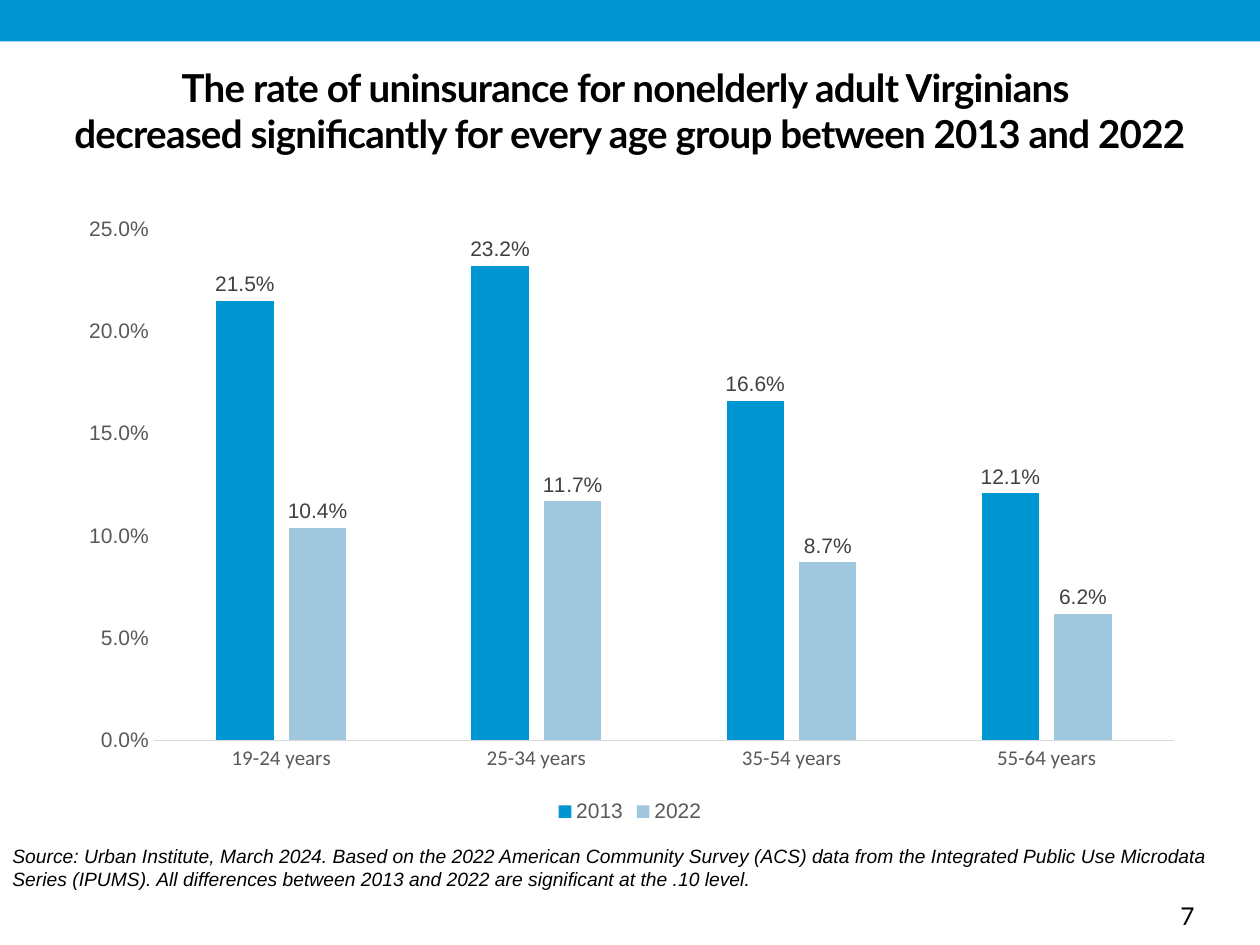
from lxml import etree
from pptx import Presentation
from pptx.chart.data import CategoryChartData
from pptx.dml.color import RGBColor
from pptx.enum.chart import XL_CHART_TYPE as ChartType, XL_LABEL_POSITION as LabelPosition
from pptx.enum.chart import XL_LEGEND_POSITION as LegendPosition, XL_TICK_MARK as TickMark
from pptx.enum.shapes import MSO_SHAPE as Shape
from pptx.enum.text import MSO_ANCHOR as Anchor, MSO_AUTO_SIZE as AutoSize, PP_ALIGN as Align
from pptx.oxml import parse_xml
from pptx.oxml.ns import nsdecls, qn
from pptx.util import Inches, Pt

BLUE, PALE_BLUE = "0096D2", "9FC7DE"
BLACK, GREY, DARK_GREY, LIGHT_GREY = "000000", "595959", "404040", "D9D9D9"


def style(font, name, size, color, bold=False, italic=False):
    font.name, font.size = name, Pt(size)
    font.bold, font.italic = bold, italic
    font.color.rgb = RGBColor.from_string(color)


deck = Presentation()
deck.slide_width, deck.slide_height = Inches(10), Inches(7.5)
width, height = deck.slide_width, deck.slide_height
margin = int(width * 0.05)
page = deck.slides.add_slide(deck.slide_layouts[5])

# Top band
band = page.shapes.add_shape(Shape.RECTANGLE, 0, 0, width, Inches(0.33))
band.shadow.inherit = False
band.fill.solid()
band.fill.fore_color.rgb = RGBColor.from_string(BLUE)
band.line.fill.background()

# Title
title = page.shapes.title
title.left, title.top = margin, Inches(0.51)
title.width, title.height = width - 2 * margin, Inches(1.17)
frame = title.text_frame
frame.text = ("The rate of uninsurance for nonelderly adult Virginians \v"
              "decreased significantly for every age group between 2013 and 2022")
frame.margin_left = frame.margin_right = frame.margin_top = frame.margin_bottom = 0
frame.vertical_anchor = Anchor.TOP
frame.auto_size = AutoSize.NONE
frame.word_wrap = True
frame.paragraphs[0].alignment = Align.CENTER
for span in frame.paragraphs[0].runs:
    style(span.font, "Lato", 22, BLACK, bold=True)
    span.font._element.set("spc", "-40")

# Chart
data = CategoryChartData(number_format="0.0%")
data.categories = ["19-24 years", "25-34 years", "35-54 years", "55-64 years"]
data.add_series("2013", [0.215, 0.232, 0.166, 0.121])
data.add_series("2022", [0.104, 0.117, 0.087, 0.062])
chart = page.shapes.add_chart(ChartType.COLUMN_CLUSTERED, margin, Inches(1.62),
                              width - 2 * margin, Inches(4.95), data).chart
style(chart.font, "Calibri", 10, BLACK)
chart.has_title = False
chart.has_legend = True
chart.legend.position = LegendPosition.BOTTOM
chart.legend.include_in_layout = False
style(chart.legend.font, "Arial", 12, GREY)

for axis, font_name in ((chart.category_axis, "Calibri"), (chart.value_axis, "Arial")):
    axis.major_tick_mark = axis.minor_tick_mark = TickMark.NONE
    axis.has_major_gridlines = False
    style(axis.tick_labels.font, font_name, 12, GREY)
chart.category_axis.format.line.color.rgb = RGBColor.from_string(LIGHT_GREY)
chart.category_axis.format.line.width = Pt(0.75)
values = chart.value_axis
values.format.line.fill.background()
values.minimum_scale, values.maximum_scale, values.major_unit = 0, 0.25, 0.05
values.tick_labels.number_format = "0.0%"
values.tick_labels.number_format_is_linked = False

plot = chart.plots[0]
plot.gap_width, plot.overlap = 219, -27
plot.vary_by_categories = False
for series, color in zip(plot.series, (BLUE, PALE_BLUE)):
    series.format.fill.solid()
    series.format.fill.fore_color.rgb = RGBColor.from_string(color)
    labels = series.data_labels
    labels.show_value = True
    labels.position = LabelPosition.OUTSIDE_END
    labels.number_format, labels.number_format_is_linked = "0.0%", False
    style(labels.font, "Arial", 12, DARK_GREY)

# Fixed inner plot area, as shares of the chart
plot_area = chart._chartSpace.chart.plotArea
for old in plot_area.findall(qn("c:layout")):
    plot_area.remove(old)
layout = parse_xml(f"<c:layout {nsdecls('c')}><c:manualLayout/></c:layout>")
for tag, value in (("layoutTarget", "inner"), ("xMode", "edge"), ("yMode", "edge"),
                   ("x", "0.08"), ("y", "0.04"), ("w", "0.9"), ("h", "0.82")):
    etree.SubElement(layout[0], qn(f"c:{tag}")).set("val", value)
plot_area.insert(0, layout)

# Source line and page number
source = ("Source: Urban Institute, March 2024. Based on the 2022 American Community Survey (ACS) "
          "data from the Integrated Public Use Microdata Series (IPUMS). All differences between "
          "2013 and 2022 are significant at the .10 level.")
for text, left, top, box_height, font_name, size, italic in (
        (source, 0, 6.65, 0.47, "Arial", 11, True),
        ("7", 9.27, 7.1, 0.34, "Lato", 14, False)):
    box = page.shapes.add_textbox(Inches(left), Inches(top), width - Inches(left), Inches(box_height))
    box.text_frame.word_wrap = True
    box.text_frame.text = text
    style(box.text_frame.paragraphs[0].runs[0].font, font_name, size, BLACK, italic=italic)

deck.save("out.pptx")
